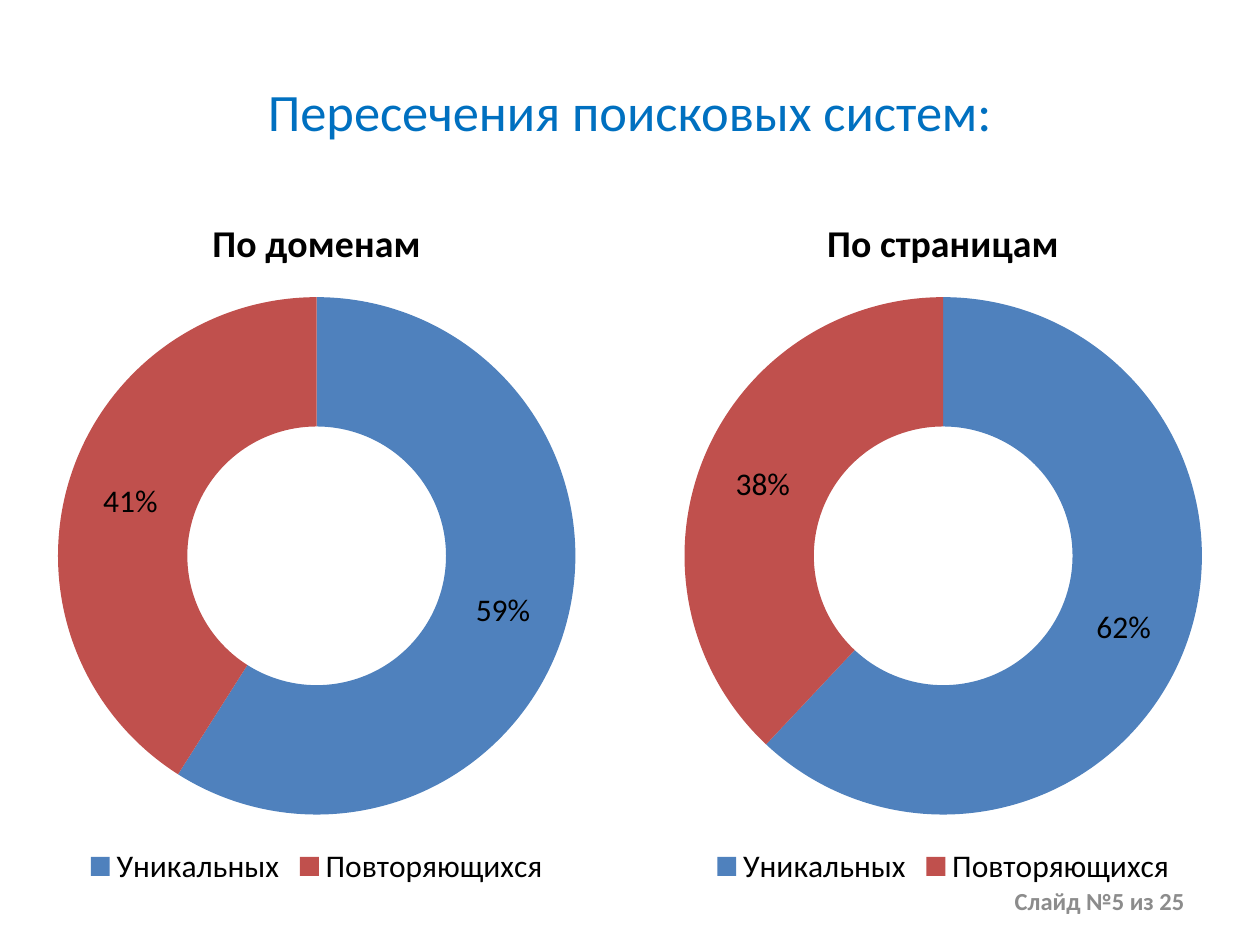
from pptx import Presentation
from pptx.chart.data import CategoryChartData
from pptx.dml.color import RGBColor
from pptx.enum.chart import XL_CHART_TYPE as ChartType, XL_LEGEND_POSITION as LegendPosition
from pptx.enum.text import MSO_ANCHOR as Anchor, PP_ALIGN as Align
from pptx.util import Cm, Pt


def style(font, size, color, bold=False):
    font.name = "Calibri"
    font.size = Pt(size)
    font.bold = bold
    font.color.rgb = RGBColor.from_string(color)


def add_text(page, text, left, top, width, height, align, anchor, size, color, bold=False):
    box = page.shapes.add_textbox(Cm(left), Cm(top), Cm(width), Cm(height))
    frame = box.text_frame
    frame.word_wrap = True
    frame.vertical_anchor = anchor
    frame.text = text
    para = frame.paragraphs[0]
    para.alignment = align
    style(para.runs[0].font, size, color, bold)


deck = Presentation()
deck.slide_width = Cm(25.4)
deck.slide_height = Cm(19.05)
page = deck.slides.add_slide(deck.slide_layouts[6])

add_text(page, "Пересечения поисковых систем:", 0, 1.47, 25.4, 1.53,
         Align.CENTER, Anchor.TOP, 30, "0070C0")

charts = [
    ("По доменам", 0.71, (59, 41)),
    ("По страницам", 13.34, (62, 38)),
]
for title, left, shares in charts:
    data = CategoryChartData(number_format="0")
    data.categories = ["Уникальных", "Повторяющихся"]
    data.add_series("Series 1", shares)
    chart = page.shapes.add_chart(ChartType.DOUGHNUT, Cm(left), Cm(3.81),
                                  Cm(11.35), Cm(14.17), data).chart
    style(chart.font, 18, "000000")

    chart.has_title = True
    chart.chart_title.include_in_layout = False
    chart.chart_title.text_frame.text = title
    style(chart.chart_title.text_frame.paragraphs[0].runs[0].font, 21.6, "000000", True)

    chart.has_legend = True
    chart.legend.position = LegendPosition.BOTTOM
    chart.legend.include_in_layout = False

    plot = chart.plots[0]
    plot.vary_by_categories = True
    plot.has_data_labels = True
    labels = plot.data_labels
    labels.show_percentage = True
    labels.show_value = False
    labels.number_format = "0%"
    labels.number_format_is_linked = False
    style(labels.font, 18, "000000")

    for index, color in enumerate(["4F81BD", "C0504D"]):
        fill = plot.series[0].points[index].format.fill
        fill.solid()
        fill.fore_color.rgb = RGBColor.from_string(color)

add_text(page, "Слайд №5 из 25", 18.21, 17.65, 5.92, 1.02,
         Align.RIGHT, Anchor.MIDDLE, 14, "8C8C8C", True)

deck.save("out.pptx")
